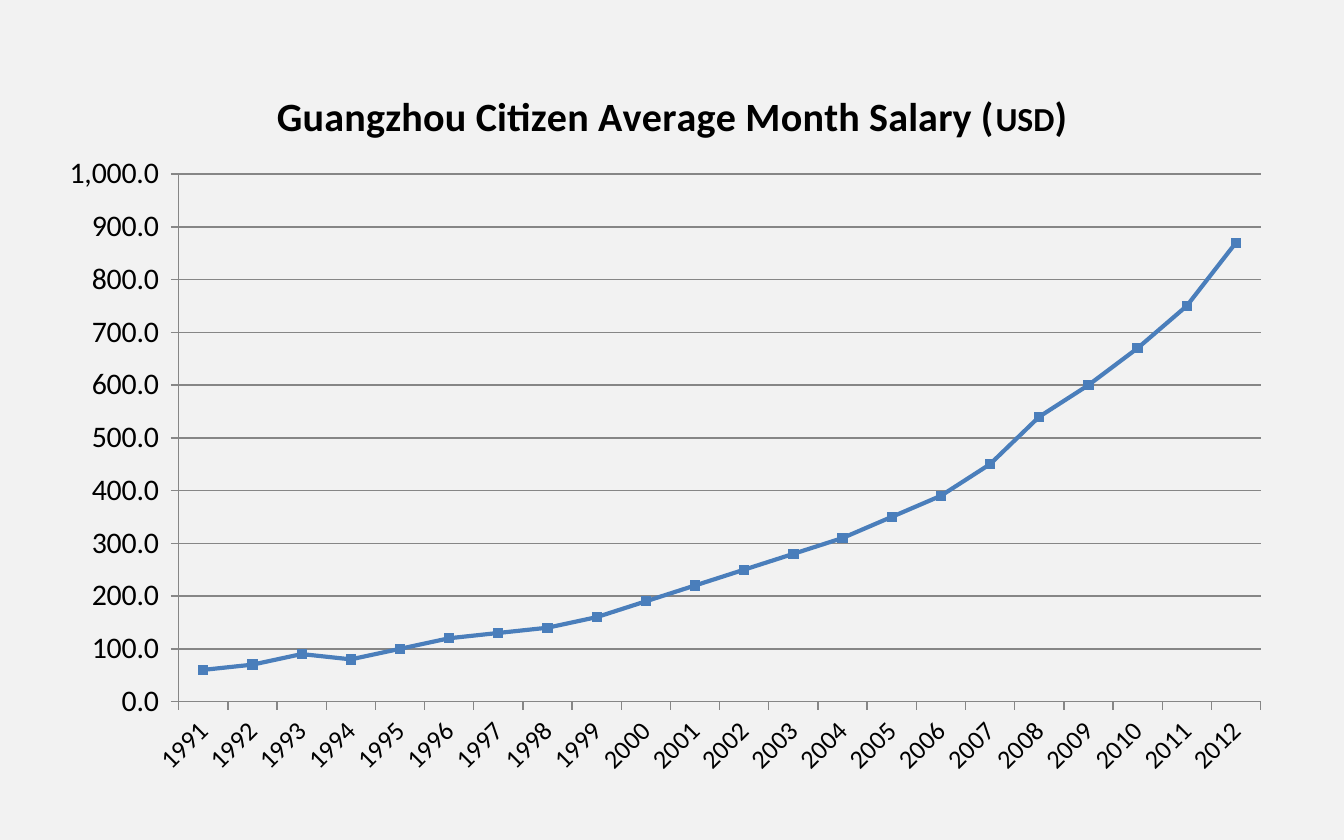
from lxml import etree
from pptx import Presentation
from pptx.chart.data import CategoryChartData
from pptx.dml.color import RGBColor as RGB
from pptx.enum.chart import XL_CHART_TYPE as CT, XL_MARKER_STYLE as MS, XL_TICK_MARK as TM
from pptx.oxml.ns import qn
from pptx.util import Inches, Pt

THEME = {
    "font": "Calibri",
    "back": RGB.from_string("F2F2F2"),
    "text": RGB.from_string("000000"),
    "line": RGB.from_string("4A7EBB"),
    "marker": RGB.from_string("4F81BD"),
    "grid": RGB.from_string("868686"),
    "title": Pt(21.5), "unit": Pt(18), "values": Pt(16), "years": Pt(14),
}


def place(parent, index, target=None, **percents):
    """Give a chart part a manual layout, in percent of the chart's size."""
    for old in parent.findall(qn("c:layout")):
        parent.remove(old)
    layout = etree.Element(qn("c:layout"))
    manual = etree.SubElement(layout, qn("c:manualLayout"))
    settings = {"layoutTarget": target} if target else {}
    settings |= {"xMode": "edge", "yMode": "edge"}
    settings |= {tag: share / 100 for tag, share in percents.items()}
    for tag, val in settings.items():
        etree.SubElement(manual, qn(f"c:{tag}")).set("val", str(val))
    parent.insert(index, layout)


# Slide
prs = Presentation()
prs.slide_width, prs.slide_height = Inches(10), Inches(6.25)
slide = prs.slides.add_slide(prs.slide_layouts[6])
slide.background.fill.solid()
slide.background.fill.fore_color.rgb = THEME["back"]

# Salary by year; the label of 2008 starts with a no-break space
salaries = [60, 70, 90, 80, 100, 120, 130, 140, 160, 190, 220,
            250, 280, 310, 350, 390, 450, 540, 600, 670, 750, 870]
labels = [str(1991 + i) for i in range(len(salaries))]
labels[labels.index("2008")] = " 2008"
data = CategoryChartData(number_format="#,##0.0_ ")
data.categories = labels
data.add_series("Series 1", salaries)

top = int(prs.slide_height * 0.075)
chart = slide.shapes.add_chart(CT.LINE_MARKERS, 0, top, prs.slide_width,
                               prs.slide_height - top, data).chart
chart.has_legend = False
chart.font.name, chart.font.size = THEME["font"], Pt(18)
chart.font.color.rgb = THEME["text"]

# Title with a smaller unit
p = chart.chart_title.text_frame.paragraphs[0]
for text, size in (("Guangzhou Citizen Average Month Salary (", "title"),
                   ("USD", "unit"), (")", "title")):
    r = p.add_run()
    r.text = text
    r.font.name, r.font.size, r.font.bold = THEME["font"], THEME[size], True
    r.font.color.rgb = THEME["text"]
chart.chart_title.include_in_layout = False

# Axes
years, values = chart.category_axis, chart.value_axis
for axis, size in ((years, "years"), (values, "values")):
    axis.major_tick_mark, axis.minor_tick_mark = TM.OUTSIDE, TM.NONE
    axis.tick_labels.font.size = THEME[size]
    axis.format.line.color.rgb = THEME["grid"]
    axis.format.line.width = Pt(0.75)
years._element.find(qn("c:txPr")).find(qn("a:bodyPr")).set("rot", "-2700000")
values.minimum_scale, values.maximum_scale, values.major_unit = 0, 1000, 100
values.tick_labels.number_format = "#,##0.0_ "
values.tick_labels.number_format_is_linked = False
values.has_major_gridlines = True
values.major_gridlines.format.line.color.rgb = THEME["grid"]
values.major_gridlines.format.line.width = Pt(0.75)

# Salary line
plot = chart.plots[0]
plot.vary_by_categories = False
s = plot.series[0]
s.smooth = False
s.format.line.color.rgb = THEME["line"]
s.format.line.width = Pt(2.25)
s.marker.style, s.marker.size = MS.SQUARE, 5
s.marker.format.fill.solid()
s.marker.format.fill.fore_color.rgb = THEME["marker"]
s.marker.format.line.color.rgb = THEME["line"]

# Positions within the chart
place(chart.chart_title._element, 1, x=20.3, y=2.9)
plot_area = chart._chartSpace.find(".//" + qn("c:plotArea"))
place(plot_area, 0, "inner", x=13.3, y=14.3, w=80.5, h=67.9)

prs.save("out.pptx")
